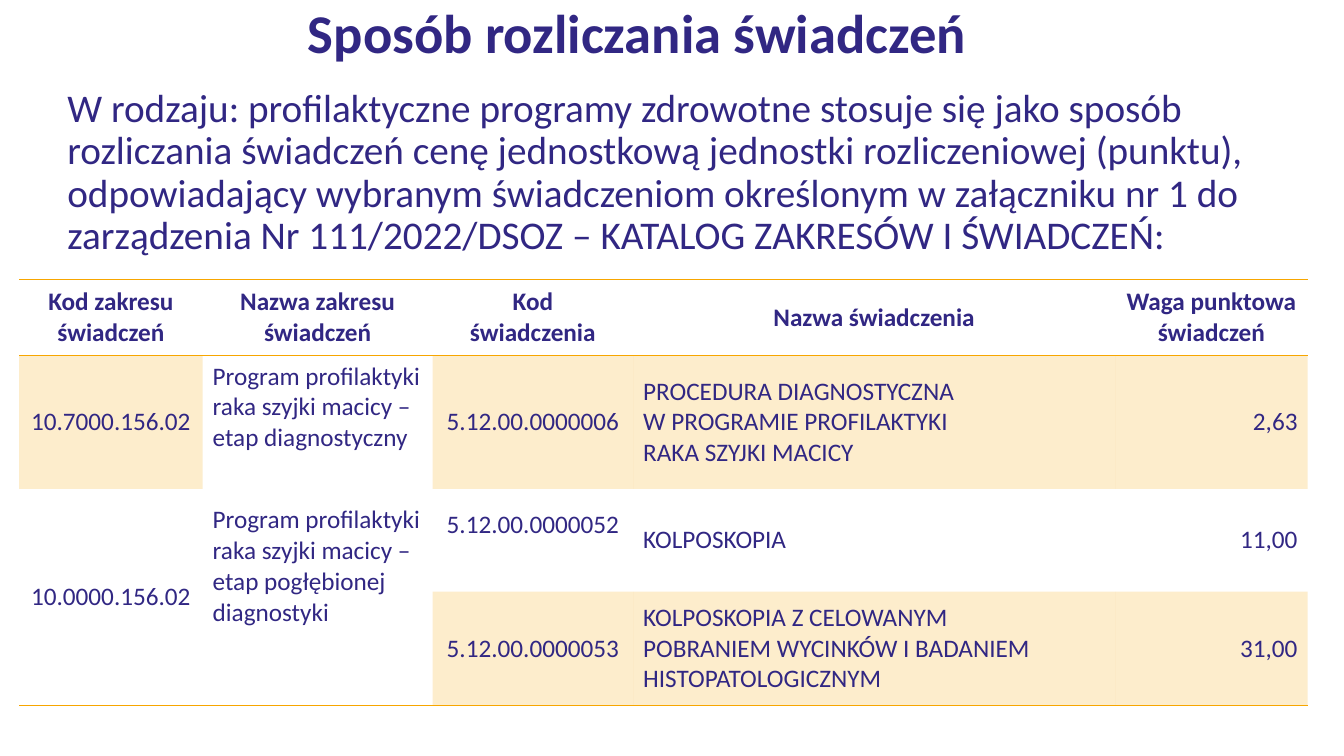
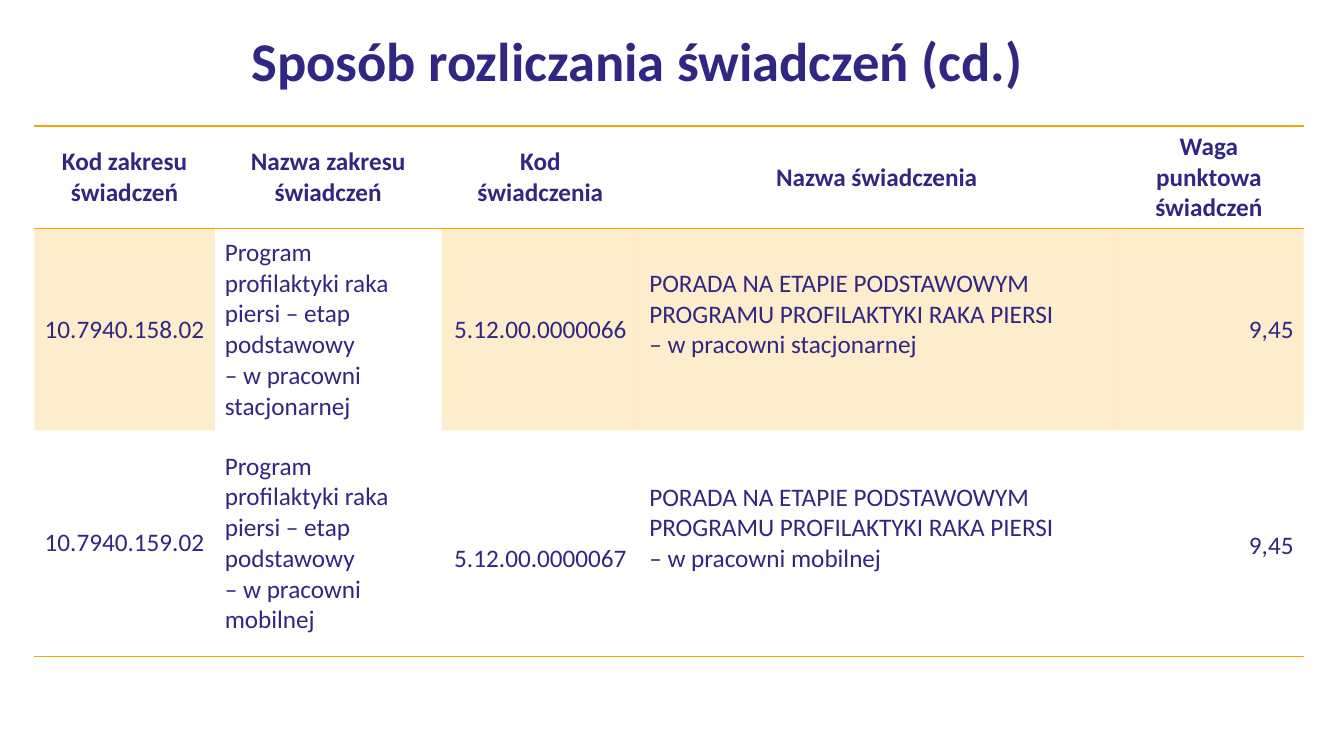
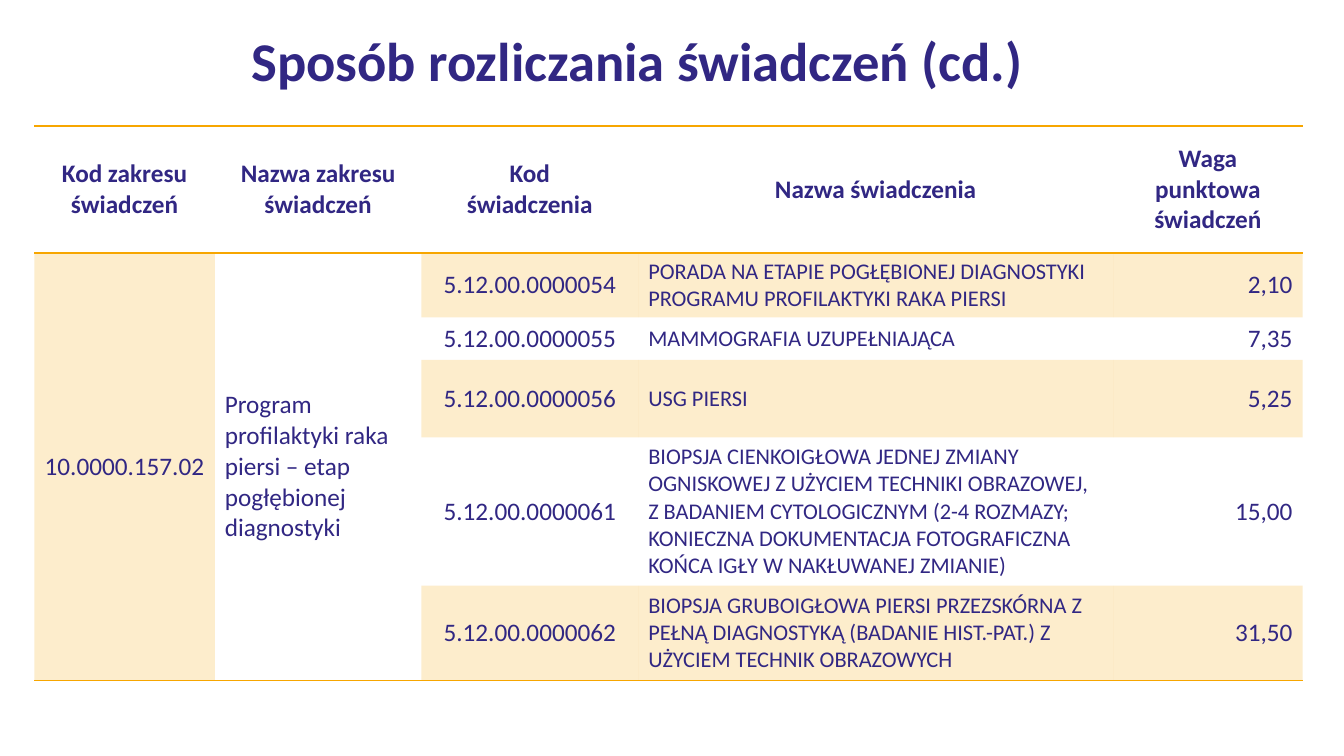
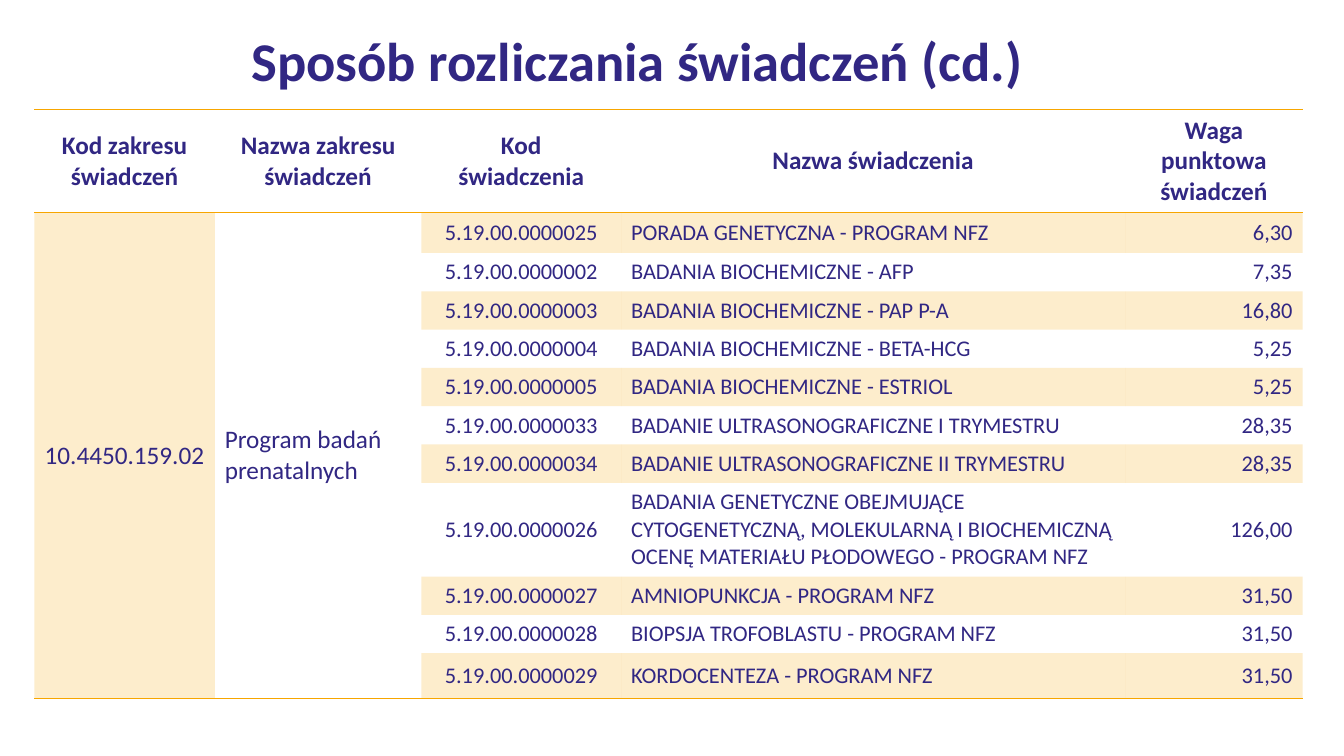
from lxml import etree
from pptx import Presentation
from pptx.dml.color import RGBColor
from pptx.enum import text as t
from pptx.oxml import ns
from pptx.util import Inches, Pt

NAVY = RGBColor(0x31, 0x27, 0x83)
ORANGE = RGBColor(0xF7, 0xA6, 0x00)
FONT = "Calibri"
NO_STYLE_NO_GRID = "{2D5ABB26-0587-4C30-8999-92F81FD0307C}"

LEFT, CENTER, RIGHT = t.PP_ALIGN.LEFT, t.PP_ALIGN.CENTER, t.PP_ALIGN.RIGHT
SCOPE_CODE, SCOPE_NAME, CODE, NAME, WEIGHT = range(5)
ALIGNMENTS = (CENTER, LEFT, CENTER, LEFT, RIGHT)
HEADER = ("Kod zakresu świadczeń", "Nazwa zakresu świadczeń", "Kod\nświadczenia",
          "Nazwa świadczenia", "Waga punktowa świadczeń")
TITLE = "Sposób rozliczania świadczeń"
TITLE_CONTINUED = TITLE + " (cd.)"


def add_xml(parent, tag, **attributes):
    return etree.SubElement(parent, ns.qn(tag), attributes)


class Deck:
    """Holds the shared style and the slide being filled."""

    def __init__(self):
        self.presentation = Presentation()
        self.presentation.slide_width = Inches(13.33)
        self.presentation.slide_height = Inches(7.5)
        self.slide = None

    def new_slide(self, title, top=0.2, height=0.87):
        layout = self.presentation.slide_layouts[6]
        self.slide = self.presentation.slides.add_slide(layout)
        self.text_box(title, (0.57, top, 11.5, height), CENTER,
                      t.MSO_ANCHOR.MIDDLE, size=39, bold=True)

    def set_text(self, frame, content, alignment, line_spacing=1.0, size=18, bold=False):
        frame.word_wrap = True
        frame.text = content
        font_values = {"name": FONT, "size": Pt(size), "bold": bold}
        for paragraph in frame.paragraphs:
            paragraph.alignment = alignment
            paragraph.line_spacing = line_spacing
            for run in paragraph.runs:
                for key, value in font_values.items():
                    setattr(run.font, key, value)
                run.font.color.rgb = NAVY

    def text_box(self, content, box, alignment, anchor, **font):
        frame = self.slide.shapes.add_textbox(*map(Inches, box)).text_frame
        frame.vertical_anchor = anchor
        self.set_text(frame, content, alignment, line_spacing=0.9, **font)

    def rule(self, cell, sides):
        """Draw a thin orange border on the given sides (T, B)."""
        for side in sides:
            line = add_xml(cell._tc.get_or_add_tcPr(), f"a:ln{side}", w=str(Pt(1)))
            add_xml(add_xml(line, "a:solidFill"), "a:srgbClr", val=str(ORANGE))

    def fill(self, cell, striped):
        if not striped:
            cell.fill.background()
            return
        cell.fill.solid()
        cell.fill.fore_color.rgb = ORANGE
        color = cell._tc.tcPr.find(ns.qn("a:solidFill"))[0]
        add_xml(color, "a:alpha", val="20000")

    def price_table(self, left, top, widths, heights, scopes, sizes=None, margins=None):
        """Each scope is (code, name, services); sizes go by column, margins by cell."""
        sizes, margins = sizes or {}, margins or {}
        frame = self.slide.shapes.add_table(
            len(heights), len(widths), Inches(left), Inches(top),
            Inches(sum(widths)), Inches(sum(heights)))
        table = frame.table
        table.first_row = table.horz_banding = False
        table._tbl.tblPr.find(ns.qn("a:tableStyleId")).text = NO_STYLE_NO_GRID
        for column, width in zip(table.columns, widths):
            column.width = Inches(width)
        for row, height in zip(table.rows, heights):
            row.height = Inches(height)

        entries = {(0, column): label for column, label in enumerate(HEADER)}
        bottom_cells = {(len(heights) - 1, column) for column in range(len(widths))}
        first = 1
        for scope_code, scope_name, services in scopes:
            last = first + len(services) - 1
            for column, label in ((SCOPE_CODE, scope_code), (SCOPE_NAME, scope_name)):
                entries[first, column] = label
                if last > first:
                    table.cell(first, column).merge(table.cell(last, column))
                if last == len(heights) - 1:
                    bottom_cells.add((first, column))
            for row, service in enumerate(services, first):
                for column, label in enumerate(service, CODE):
                    entries[row, column] = label
            first = last + 1

        for row in range(len(heights)):
            for column in range(len(widths)):
                cell = table.cell(row, column)
                if row == 0:
                    self.rule(cell, "TB")
                elif (row, column) in bottom_cells:
                    self.rule(cell, "B")
                if (row, column) not in entries:
                    continue
                self.fill(cell, row % 2 == 1 and column != SCOPE_NAME)
                cell.vertical_anchor = t.MSO_ANCHOR.MIDDLE
                for side, margin in margins.get((row, column), {}).items():
                    setattr(cell, f"margin_{side}", Inches(margin))
                self.set_text(cell.text_frame, entries[row, column],
                              ALIGNMENTS[column] if row else CENTER,
                              size=sizes.get(column, 18) if row else 18, bold=row == 0)


def cervical_slide(deck):
    deck.new_slide(TITLE, top=0, height=0.71)
    deck.text_box(
        "W rodzaju: profilaktyczne programy zdrowotne stosuje się jako sposób rozliczania "
        "świadczeń cenę jednostkową jednostki rozliczeniowej (punktu), odpowiadający wybranym "
        "świadczeniom określonym w załączniku nr 1 do zarządzenia Nr 111/2022/DSOZ – KATALOG "
        "ZAKRESÓW I ŚWIADCZEŃ:",
        (0.57, 0.83, 12.64, 1.83), LEFT, t.MSO_ANCHOR.TOP, size=28)
    program = "Program profilaktyki raka szyjki macicy – etap "
    deck.price_table(
        0.19, 2.77, (1.82, 2.28, 1.99, 4.78, 1.91), (0.76, 1.32, 1.02, 1.13),
        [("10.7000.156.02", program + "diagnostyczny", [
            ("5.12.00.0000006",
             "PROCEDURA DIAGNOSTYCZNA\vW PROGRAMIE PROFILAKTYKI\vRAKA SZYJKI MACICY", "2,63")]),
         ("10.0000.156.02", program + "pogłębionej diagnostyki", [
             ("5.12.00.0000052", "KOLPOSKOPIA", "11,00"),
             ("5.12.00.0000053",
              "KOLPOSKOPIA Z CELOWANYM\nPOBRANIEM WYCINKÓW I BADANIEM HISTOPATOLOGICZNYM",
              "31,00")])],
        margins={(1, SCOPE_NAME): {"bottom": 0.35}, (2, SCOPE_NAME): {"bottom": 0.66},
                 (2, CODE): {"bottom": 0.35}})


def breast_basic_slide(deck):
    deck.new_slide(TITLE_CONTINUED)
    program = "Program profilaktyki raka piersi – etap podstawowy\v"
    service = "PORADA NA ETAPIE PODSTAWOWYM PROGRAMU PROFILAKTYKI RAKA PIERSI\v"
    places = (("10.7940.158.02", "5.12.00.0000066", "– w pracowni stacjonarnej"),
              ("10.7940.159.02", "5.12.00.0000067", "– w pracowni mobilnej"))
    deck.price_table(
        0.34, 1.25, (1.79, 2.25, 1.96, 4.71, 1.88), (1.02, 2, 2.24),
        [(scope, program + place, [(code, service + place, "9,45")])
         for scope, code, place in places],
        margins={(1, NAME): {"bottom": 0.35}, (2, NAME): {"bottom": 0.35},
                 (2, CODE): {"top": 0.35}, (2, WEIGHT): {"top": 0.1}})


def breast_advanced_slide(deck):
    deck.new_slide(TITLE_CONTINUED)
    services = [
        ("5.12.00.0000054",
         "PORADA NA ETAPIE POGŁĘBIONEJ DIAGNOSTYKI PROGRAMU PROFILAKTYKI RAKA PIERSI", "2,10"),
        ("5.12.00.0000055", "MAMMOGRAFIA UZUPEŁNIAJĄCA", "7,35"),
        ("5.12.00.0000056", "USG PIERSI", "5,25"),
        ("5.12.00.0000061",
         "BIOPSJA CIENKOIGŁOWA JEDNEJ ZMIANY OGNISKOWEJ Z UŻYCIEM TECHNIKI OBRAZOWEJ, "
         "Z BADANIEM CYTOLOGICZNYM (2-4 ROZMAZY; KONIECZNA DOKUMENTACJA FOTOGRAFICZNA "
         "KOŃCA IGŁY W NAKŁUWANEJ ZMIANIE)", "15,00"),
        ("5.12.00.0000062",
         "BIOPSJA GRUBOIGŁOWA PIERSI PRZEZSKÓRNA Z PEŁNĄ DIAGNOSTYKĄ "
         "(BADANIE HIST.-PAT.) Z UŻYCIEM TECHNIK OBRAZOWYCH", "31,50"),
    ]
    deck.price_table(
        0.34, 1.25, (1.79, 2.05, 2.15, 4.71, 1.88), (1.26, 0.64, 0.42, 0.77, 1.47, 0.94),
        [("10.0000.157.02", "Program profilaktyki raka piersi – etap pogłębionej diagnostyki",
          services)],
        sizes={NAME: 16})


def prenatal_slide(deck):
    deck.new_slide(TITLE_CONTINUED)
    services = [
        ("5.19.00.0000025", "PORADA GENETYCZNA - PROGRAM NFZ", "6,30"),
        ("5.19.00.0000002", "BADANIA BIOCHEMICZNE - AFP", "7,35"),
        ("5.19.00.0000003", "BADANIA BIOCHEMICZNE - PAP P-A", "16,80"),
        ("5.19.00.0000004", "BADANIA BIOCHEMICZNE - BETA-HCG", "5,25"),
        ("5.19.00.0000005", "BADANIA BIOCHEMICZNE - ESTRIOL", "5,25"),
        ("5.19.00.0000033", "BADANIE ULTRASONOGRAFICZNE I TRYMESTRU", "28,35"),
        ("5.19.00.0000034", "BADANIE ULTRASONOGRAFICZNE II TRYMESTRU", "28,35"),
        ("5.19.00.0000026",
         "BADANIA GENETYCZNE OBEJMUJĄCE CYTOGENETYCZNĄ, MOLEKULARNĄ I BIOCHEMICZNĄ "
         "OCENĘ MATERIAŁU PŁODOWEGO - PROGRAM NFZ", "126,00"),
        ("5.19.00.0000027", "AMNIOPUNKCJA - PROGRAM NFZ", "31,50"),
        ("5.19.00.0000028", "BIOPSJA TROFOBLASTU - PROGRAM NFZ", "31,50"),
        ("5.19.00.0000029", "KORDOCENTEZA - PROGRAM NFZ", "31,50"),
    ]
    deck.price_table(
        0.34, 1.09, (1.79, 2.05, 1.98, 5, 1.76),
        (1.02, 0.4, *[0.38] * 6, 0.93, 0.38, 0.38, 0.45),
        [("10.4450.159.02", "Program badań prenatalnych", services)],
        sizes={CODE: 16, NAME: 16, WEIGHT: 16})


def main():
    deck = Deck()
    for build in (cervical_slide, breast_basic_slide, breast_advanced_slide, prenatal_slide):
        build(deck)
    deck.presentation.save("out.pptx")


if __name__ == "__main__":
    main()
